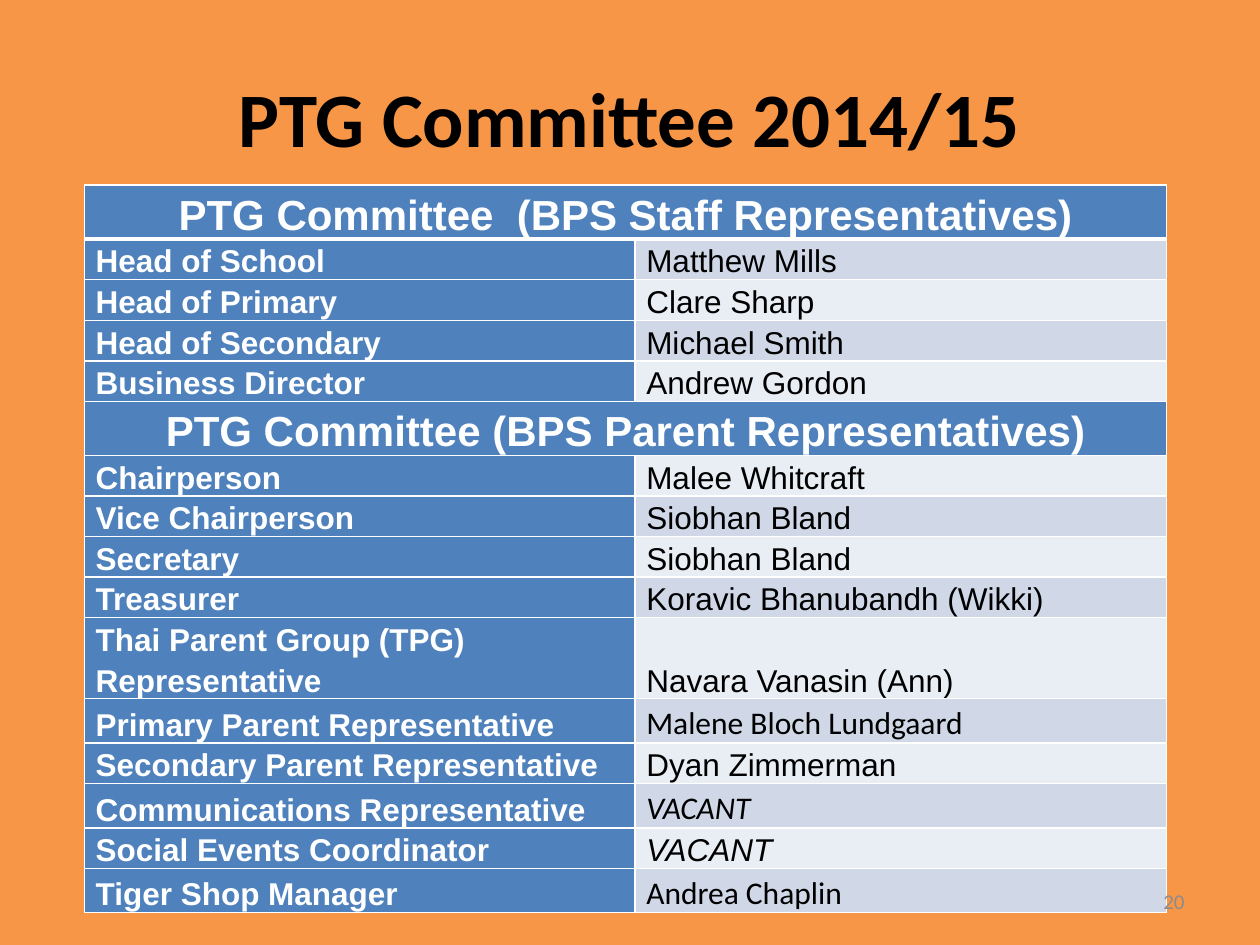
import pptx
import pptx.dml.color
import pptx.enum.text
import pptx.util
from lxml import etree

WIDE, HIGH = 10, 7.5
COLS = [4.37, 4.22]
ROW = 0.28
BLUE, WHITE, BLACK = "4F81BD", "FFFFFF", "000000"
BANDS = ["E9EDF4", "D0D8E8"]  # even and odd rows
ALIGN = pptx.enum.text.PP_ALIGN
ANCHOR = pptx.enum.text.MSO_ANCHOR
NS = "http://schemas.openxmlformats.org/drawingml/2006/main"

# One entry is a heading row; otherwise role, name and any name styles
ROWS = [
    ("PTG Committee  (BPS Staff Representatives)",),
    ("Head of School", "Matthew Mills"),
    ("Head of Primary", "Clare Sharp"),
    ("Head of Secondary", "Michael Smith"),
    ("Business Director", "Andrew Gordon"),
    ("PTG Committee (BPS Parent Representatives)",),
    ("Chairperson", "Malee Whitcraft"),
    ("Vice Chairperson", "Siobhan Bland"),
    ("Secretary", "Siobhan Bland"),
    ("Treasurer", "Koravic Bhanubandh (Wikki)"),
    ("Thai Parent Group (TPG) Representative", "Navara Vanasin (Ann)"),
    ("Primary Parent Representative", "Malene Bloch Lundgaard", {"face": "Calibri"}),
    ("Secondary Parent Representative", "Dyan Zimmerman"),
    ("Communications Representative", "VACANT", {"face": "Calibri", "slant": True}),
    ("Social Events Coordinator", "VACANT", {"slant": True}),
    ("Tiger Shop Manager", "Andrea Chaplin", {"face": "Calibri"}),
]


def inch(size):
    return pptx.util.Inches(size)


def color(code):
    return pptx.dml.color.RGBColor.from_string(code)


def paint(fill, code):
    fill.solid()
    fill.fore_color.rgb = color(code)


def write(frame, text, size, face, code, bold=False, slant=False, align=ALIGN.LEFT):
    line = frame.paragraphs[0]
    line.alignment = align
    run = line.add_run()
    run.text = text
    font = run.font
    font.size, font.name = pptx.util.Pt(size), face
    font.bold, font.italic = bold, slant
    font.color.rgb = color(code)
    return line


def edge(cell, top, bottom):
    """Draw white cell borders; top and bottom are widths in points."""
    props = cell._tc.get_or_add_tcPr()
    for side, width in (("L", 1), ("R", 1), ("T", top), ("B", bottom)):
        rule = etree.SubElement(props, f"{{{NS}}}ln{side}", w=str(pptx.util.Pt(width)))
        fill = etree.SubElement(rule, f"{{{NS}}}solidFill")
        etree.SubElement(fill, f"{{{NS}}}srgbClr", val=WHITE)


def fill_cell(cell, text, back, size=18, face="Arial", code=WHITE, **style):
    paint(cell.fill, back)
    cell.vertical_anchor = ANCHOR.BOTTOM
    cell.margin_left = cell.margin_right = inch(0.09)
    cell.margin_top = cell.margin_bottom = 0
    line = write(cell.text_frame, text, size, face, code, **style)
    line.line_spacing = 1.15


def add_title(slide, text):
    title = slide.shapes.title
    title.left, title.top = inch(0.05 * WIDE), inch(0.04 * HIGH)
    title.width, title.height = inch(0.9 * WIDE), inch(1.25)
    title.text_frame.vertical_anchor = ANCHOR.MIDDLE
    write(title.text_frame, text, 44, "Calibri", BLACK, bold=True, align=ALIGN.CENTER)


def add_roster(slide):
    frame = slide.shapes.add_table(len(ROWS), len(COLS), inch(0.67), inch(1.47),
                                   inch(sum(COLS)), inch(ROW * len(ROWS)))
    table = frame.table
    for col, width in zip(table.columns, COLS):
        col.width = inch(width)
    for num, (role, *rest) in enumerate(ROWS):
        table.rows[num].height = inch(ROW)
        left, right = table.cell(num, 0), table.cell(num, 1)
        # A thick rule parts the first heading from the rows below
        for cell in (left, right):
            edge(cell, 3 if num == 1 else 1, 3 if num == 0 else 1)
        if rest:
            name, *style = rest
            fill_cell(left, role, BLUE, bold=True)
            extra = style[0] if style else {}
            fill_cell(right, name, BANDS[num % 2], code=BLACK, **extra)
        else:
            left.merge(right)
            fill_cell(left, role, BLUE, size=24, bold=True, align=ALIGN.CENTER)


def add_number(slide, text):
    box = slide.shapes.add_textbox(inch(7.17), inch(6.95), inch(2.33), inch(0.4))
    box.text_frame.word_wrap = True
    box.text_frame.vertical_anchor = ANCHOR.MIDDLE
    write(box.text_frame, text, 12, "Calibri", "8C8C8C", align=ALIGN.RIGHT)


def main():
    deck = pptx.Presentation()
    deck.slide_width, deck.slide_height = inch(WIDE), inch(HIGH)
    slide = deck.slides.add_slide(deck.slide_layouts[5])
    paint(slide.background.fill, "F79646")
    add_title(slide, "PTG Committee 2014/15")
    add_roster(slide)
    add_number(slide, "20")
    deck.save("out.pptx")


if __name__ == "__main__":
    main()
